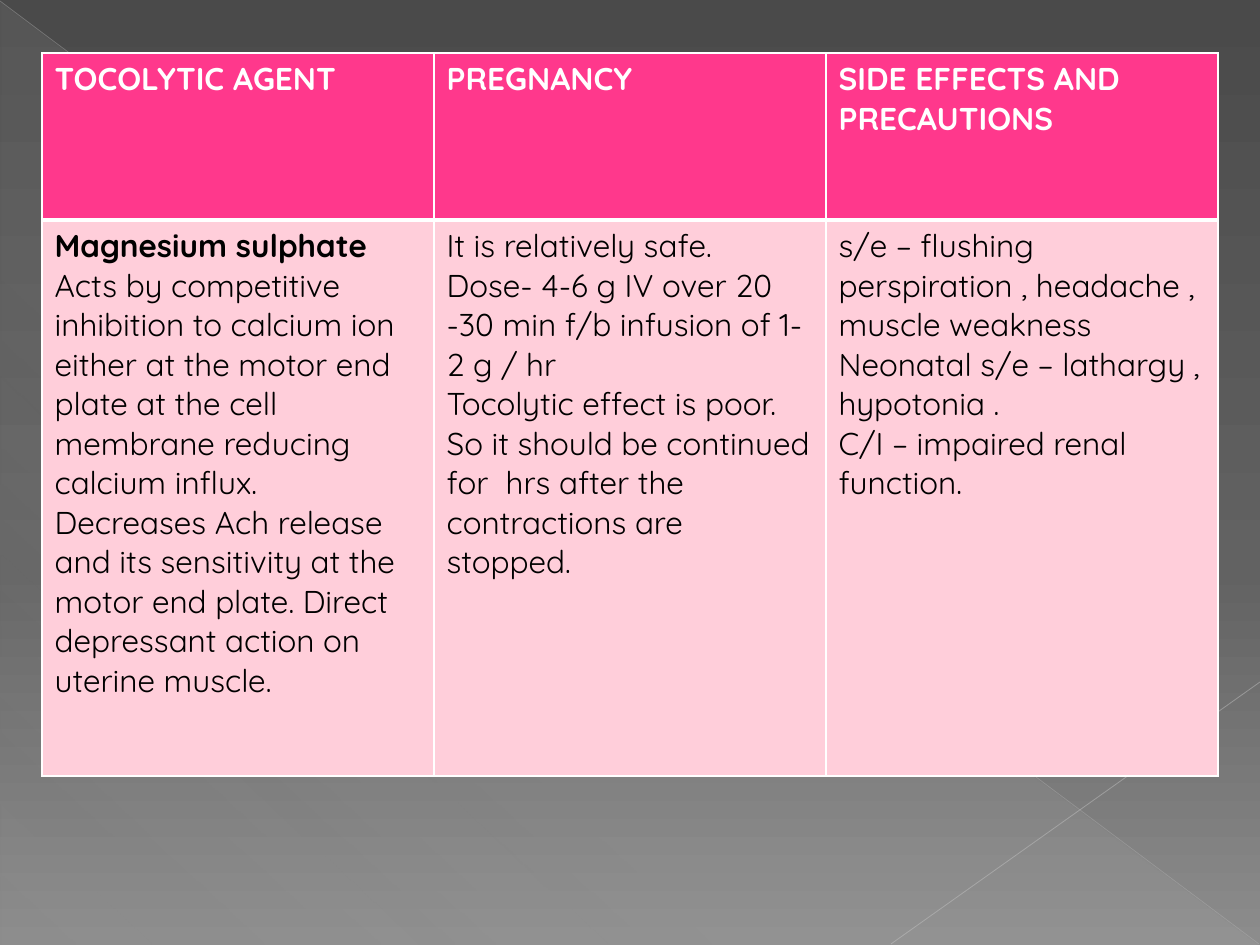
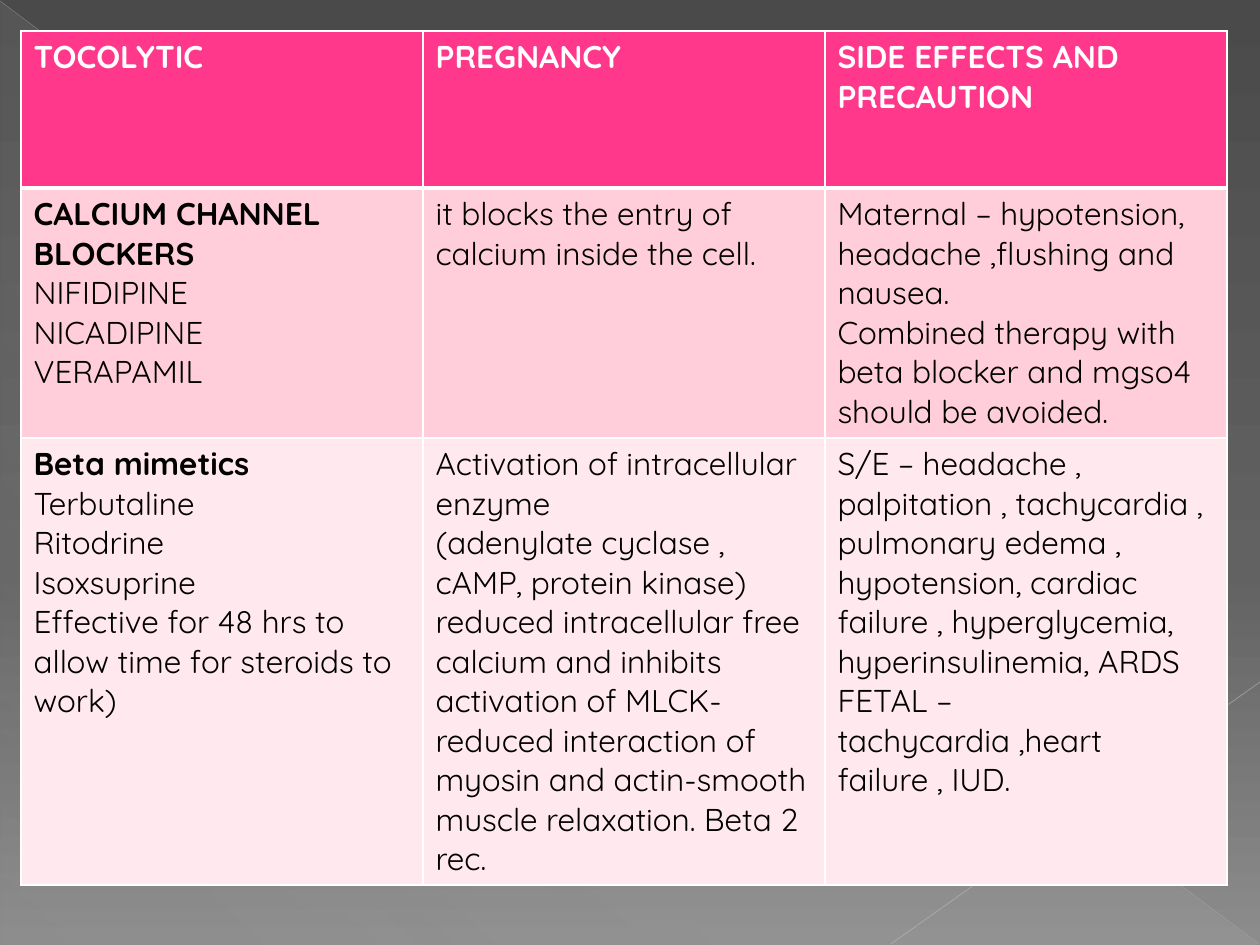
from lxml import etree
from pptx import Presentation
from pptx import util as u
from pptx.dml.color import RGBColor
from pptx.enum import shapes
from pptx.oxml import ns

EMU_PER_PX = 914400 / 126
FONT = "Quicksand"
COLORS = {
    "header": "FF388C", "band_dark": "FFCEDA", "band_light": "FFE8EE",
    "white": "FFFFFF", "black": "000000", "veil": "D2D2D2",
    "long_line": "BFBFBF", "short_line": "C6C6C6",
}
BACKDROP = [(0, "4A4A4A", 100), (60, "626262", 100), (100, "8C8C8C", 100)]
VEIL = [(0, COLORS["veil"], 10), (70, COLORS["veil"], 8), (100, COLORS["veil"], 1)]
RAYS = [
    ((0, 1, 1259, 944), "long_line", 0.39, 35),
    ((1260, 682, 891, 944), "short_line", 0.47, 45),
]
ROW_FILLS = ["header", "band_dark", "band_light"]

TABLES = [
    {
        "left": 42, "top": 53, "column": 392, "heights": [167, 556],
        "rows": [
            [["TOCOLYTIC AGENT"], ["PREGNANCY"], ["SIDE EFFECTS AND PRECAUTIONS"]],
            [
                ["Magnesium sulphate",
                 "Acts by competitive inhibition to calcium ion either at the motor end "
                 "plate at the cell membrane reducing calcium influx.",
                 "Decreases Ach release and its sensitivity at the motor end plate. "
                 "Direct depressant action on uterine muscle."],
                ["It is relatively safe.",
                 "Dose- 4-6 g IV over 20 -30 min f/b infusion of 1-2 g / hr",
                 "Tocolytic effect is poor. So it should be continued for  hrs after "
                 "the contractions are stopped."],
                ["s/e – flushing perspiration , headache , muscle weakness",
                 "Neonatal s/e – lathargy , hypotonia .",
                 "C/I – impaired renal function."],
            ],
        ],
    },
    {
        "left": 21, "top": 31, "column": 402, "heights": [157, 250, 447],
        "rows": [
            [["TOCOLYTIC"], ["PREGNANCY"], ["SIDE EFFECTS AND PRECAUTION"]],
            [
                ["CALCIUM CHANNEL BLOCKERS", "NIFIDIPINE", "NICADIPINE", "VERAPAMIL"],
                ["it blocks the entry of calcium inside the cell."],
                ["Maternal – hypotension, headache ,flushing and nausea.",
                 "Combined therapy with beta blocker and mgso4 should be avoided."],
            ],
            [
                ["Beta mimetics", "Terbutaline", "Ritodrine", "Isoxsuprine",
                 "Effective for 48 hrs to allow time for steroids to work)"],
                ["Activation of intracellular enzyme",
                 "(adenylate cyclase , cAMP, protein kinase) reduced intracellular free "
                 "calcium and inhibits activation of MLCK-reduced interaction of myosin "
                 "and actin-smooth muscle relaxation. Beta 2 rec."],
                ["S/E – headache , palpitation , tachycardia , pulmonary edema , "
                 "hypotension, cardiac failure , hyperglycemia, hyperinsulinemia, ARDS",
                 "FETAL – tachycardia ,heart failure , IUD."],
            ],
        ],
    },
]


def px(*lengths):
    return [u.Emu(round(length * EMU_PER_PX)) for length in lengths]


def set_gradient(fill, element, stops, angle):
    fill.gradient()
    gradient = next(element.iter(ns.qn("a:gradFill")))
    stop_list = gradient.find(ns.qn("a:gsLst"))
    for stop in list(stop_list):
        stop_list.remove(stop)
    for place, color, alpha in stops:
        stop = etree.SubElement(stop_list, ns.qn("a:gs"), pos=str(place * 1000))
        tone = etree.SubElement(stop, ns.qn("a:srgbClr"), val=color)
        etree.SubElement(tone, ns.qn("a:alpha"), val=str(alpha * 1000))
    gradient.find(ns.qn("a:lin")).set("ang", str(angle * 60000))


deck = Presentation()
deck.slide_width, deck.slide_height = px(1260, 945)

for content in TABLES:
    page = deck.slides.add_slide(deck.slide_layouts[6])
    set_gradient(page.background.fill, page.element, BACKDROP, 90)

    veil = page.shapes.add_shape(shapes.MSO_SHAPE.RIGHT_TRIANGLE, *px(1, 2, 1258, 943))
    veil.shadow.inherit = False
    veil.line.fill.background()
    set_gradient(veil.fill, veil.element, VEIL, 133)

    for ends, color, width, alpha in RAYS:
        ray = page.shapes.add_connector(shapes.MSO_CONNECTOR.STRAIGHT, *px(*ends))
        ray.line.color.rgb = RGBColor.from_string(COLORS[color])
        ray.line.width = u.Pt(width)
        tone = next(ray.element.spPr.iter(ns.qn("a:srgbClr")))
        etree.SubElement(tone, ns.qn("a:alpha"), val=str(alpha * 1000))
        etree.SubElement(ray.element.spPr, ns.qn("a:effectLst"))

    rows, heights = content["rows"], content["heights"]
    frame = page.shapes.add_table(
        len(rows), 3,
        *px(content["left"], content["top"], 3 * content["column"], sum(heights)))
    table = frame.table
    table.horz_banding = False
    for column in table.columns:
        column.width = px(content["column"])[0]

    for row_index, (row, height) in enumerate(zip(rows, heights)):
        table.rows[row_index].height = px(height)[0]
        is_header = row_index == 0
        edges = {"lnL": 1, "lnR": 1,
                 "lnT": 3 if row_index == 1 else 1,
                 "lnB": 3 if is_header else 1}
        for column_index, lines in enumerate(row):
            cell = table.cell(row_index, column_index)
            properties = cell._tc.get_or_add_tcPr()
            for edge, width in edges.items():
                border = etree.SubElement(properties, ns.qn(f"a:{edge}"), w=str(u.Pt(width)))
                solid = etree.SubElement(border, ns.qn("a:solidFill"))
                etree.SubElement(solid, ns.qn("a:srgbClr"), val=COLORS["white"])
            cell.fill.solid()
            cell.fill.fore_color.rgb = RGBColor.from_string(COLORS[ROW_FILLS[row_index]])
            cell.text_frame.text = "\n".join(lines)
            for line_index, para in enumerate(cell.text_frame.paragraphs):
                para.font.name = FONT
                para.font.size = u.Pt(18)
                para.font.bold = is_header or (column_index == 0 and line_index == 0)
                para.font.color.rgb = RGBColor.from_string(
                    COLORS["white" if is_header else "black"])

deck.save("out.pptx")
